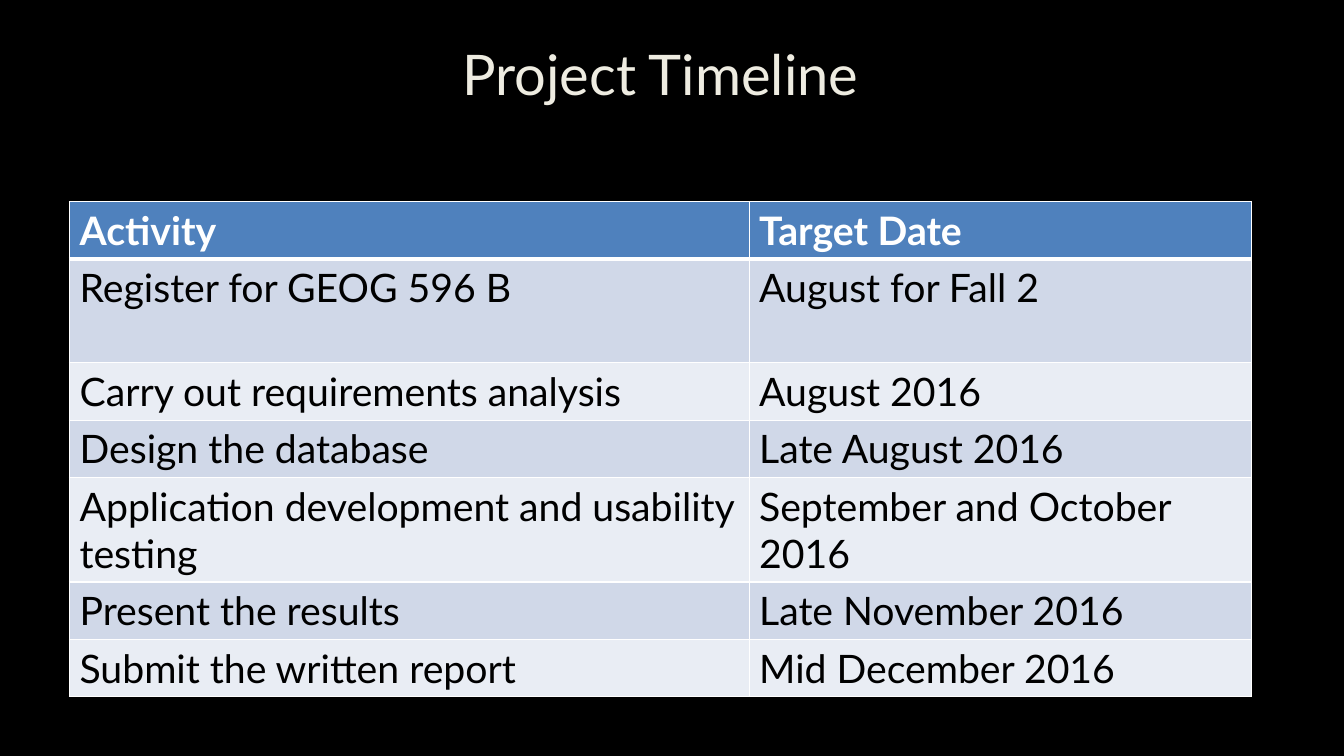
from dataclasses import dataclass

from lxml import etree
from pptx import Presentation
from pptx.dml.color import RGBColor
from pptx.enum.text import MSO_ANCHOR, PP_ALIGN
from pptx.oxml import parse_xml
from pptx.oxml.ns import nsdecls, qn
from pptx.util import Inches, Pt

CENTER = PP_ALIGN.CENTER
MIDDLE = MSO_ANCHOR.MIDDLE
BLANK = 6


@dataclass(frozen=True)
class Theme:
    font: str = "Lato"
    title_size: int = 40
    table_size: int = 28
    background: str = "000000"
    title: str = "EEECE1"
    outline: str = "404040"
    header: str = "4F81BD"
    header_text: str = "FFFFFF"
    bands: tuple = ("D0D8E8", "E9EDF4")
    body_text: str = "000000"
    border: str = "FFFFFF"


THEME = Theme()
WIDTH, HEIGHT = Inches(13.33), Inches(7.5)
TITLE_BOX = (0.89, 0.24, 11.32, 0.98)
TABLE_LEFT, TABLE_TOP = 0.69, 2
COLUMNS = (6.74, 4.98)
ONE_LINE, TWO_LINES = 0.57, 1.03

SCHEDULE = (
    ("Activity", "Target Date", ONE_LINE),
    ("Register for GEOG 596 B", "August for Fall 2", TWO_LINES),
    ("Carry out requirements analysis", "August 2016", ONE_LINE),
    ("Design the database", "Late August 2016", ONE_LINE),
    ("Application development and usability testing",
     "September and October 2016", TWO_LINES),
    ("Present the results", "Late November 2016", ONE_LINE),
    ("Submit the written report", "Mid December 2016", ONE_LINE),
)


def rgb(color):
    return RGBColor.from_string(color)


def add_run(p, text, size, color, bold=False):
    r = p.add_run()
    r.text = text
    r.font.name = THEME.font
    r.font.size = Pt(size)
    r.font.bold = bold
    r.font.color.rgb = rgb(color)
    return r


def add_outline(r, color, width, opacity):
    ln = parse_xml(
        f'<a:ln {nsdecls("a")} w="{Pt(width)}"><a:solidFill>'
        f'<a:srgbClr val="{color}"><a:alpha val="{opacity * 1000}"/></a:srgbClr>'
        f'</a:solidFill></a:ln>')
    r.font._element.insert(0, ln)


def add_title(s, text):
    sp = s.shapes.add_textbox(*map(Inches, TITLE_BOX))
    tf = sp.text_frame
    tf.word_wrap = True
    tf.vertical_anchor = MIDDLE
    p = tf.paragraphs[0]
    p.alignment = CENTER
    r = add_run(p, text, THEME.title_size, THEME.title)
    add_outline(r, THEME.outline, 0.75, 10)


def add_borders(cell, bottom, top):
    tc_pr = cell._tc.get_or_add_tcPr()
    for side, width in (("L", 1), ("R", 1), ("T", top), ("B", bottom)):
        ln = etree.SubElement(tc_pr, qn(f"a:ln{side}"), w=str(Pt(width)))
        fill = etree.SubElement(ln, qn("a:solidFill"))
        etree.SubElement(fill, qn("a:srgbClr"), val=THEME.border)


def fill_cell(cell, text, row):
    header = row == 0
    add_borders(cell, bottom=3 if header else 1, top=3 if row == 1 else 1)
    cell.fill.solid()
    cell.fill.fore_color.rgb = rgb(THEME.header if header else THEME.bands[(row - 1) % 2])
    color = THEME.header_text if header else THEME.body_text
    add_run(cell.text_frame.paragraphs[0], text, THEME.table_size, color, header)


def add_schedule(s, schedule):
    height = sum(row[-1] for row in schedule)
    frame = s.shapes.add_table(
        len(schedule), len(COLUMNS), Inches(TABLE_LEFT), Inches(TABLE_TOP),
        Inches(sum(COLUMNS)), Inches(height))
    table = frame.table
    table.horz_banding = False
    for column, width in zip(table.columns, COLUMNS):
        column.width = Inches(width)
    for i, (*texts, row_height) in enumerate(schedule):
        table.rows[i].height = Inches(row_height)
        for j, text in enumerate(texts):
            fill_cell(table.cell(i, j), text, i)


def main():
    prs = Presentation()
    prs.slide_width, prs.slide_height = WIDTH, HEIGHT
    s = prs.slides.add_slide(prs.slide_layouts[BLANK])
    s.background.fill.solid()
    s.background.fill.fore_color.rgb = rgb(THEME.background)
    add_title(s, "Project Timeline")
    add_schedule(s, SCHEDULE)
    prs.save("out.pptx")


if __name__ == "__main__":
    main()
